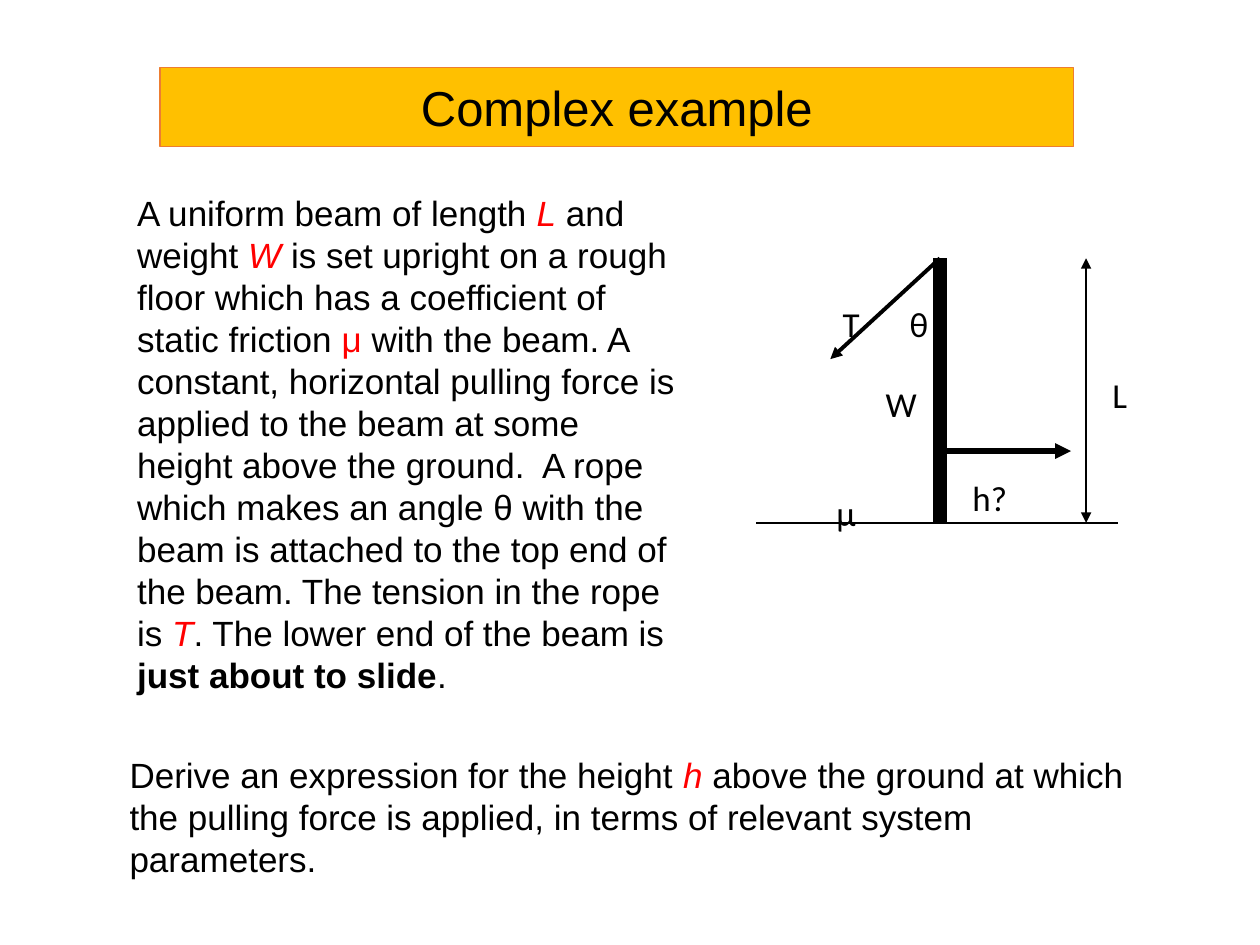
from lxml.etree import SubElement
from pptx import Presentation
from pptx.dml.color import RGBColor
from pptx.enum.shapes import MSO_CONNECTOR as Link, MSO_SHAPE as Shape
from pptx.enum.text import MSO_ANCHOR as Anchor, MSO_AUTO_SIZE as Fit, PP_ALIGN as Align
from pptx.oxml.ns import qn
from pptx.util import Inches, Pt

BLACK = RGBColor(0, 0, 0)
WHITE = RGBColor(255, 255, 255)
RED = RGBColor(255, 0, 0)
GOLD = RGBColor(255, 192, 0)
RUST = RGBColor(237, 125, 49)

deck = Presentation()
deck.slide_width, deck.slide_height = Inches(10), Inches(7.5)
slide = deck.slides.add_slide(deck.slide_layouts[5])

# Grid of 100 columns by 75 rows, in square cells
CELL = deck.slide_width // 100


def grid(*cells):
    return [round(n * CELL) for n in cells]


def set_font(font, name, size):
    font.name, font.size = name, Pt(size)
    font.color.rgb = BLACK


# Title bar
title = slide.shapes.title
title.left, title.top, title.width, title.height = grid(12.7, 5.35, 72.5, 6.3)
title.fill.solid()
title.fill.fore_color.rgb = GOLD
title.line.color.rgb = RUST
title.line.width = Pt(0.75)
frame = title.text_frame
frame.text = "Complex example"
frame.vertical_anchor = Anchor.MIDDLE
head = frame.paragraphs[0]
head.alignment = Align.CENTER
set_font(head.font, "Arial", 28)

# Problem and question: style is "" plain, "r" red, "i" red italic, "b" bold
problem = [
    ("A uniform beam of length ", ""), ("L", "i"), (" and weight ", ""), ("W", "i"),
    (" is set upright on a rough floor which has a coefficient of static friction ", ""),
    ("μ", "r"),
    (" with the beam. A constant, horizontal pulling force is applied to the beam "
     "at some height above the ground.  A rope which makes an angle θ with the beam "
     "is attached to the top end of the beam. The tension in the rope is ", ""),
    ("T", "i"), (". The lower end of the beam is ", ""),
    ("just about to slide", "b"), (".", ""),
]
question = [
    ("Derive an expression for the height ", ""), ("h", "i"),
    (" above the ground at which the pulling force is applied, "
     "in terms of relevant system parameters.", ""),
]
for cells, parts in [((9.9, 14.7, 45.3, 41.4), problem),
                     ((9.3, 59.3, 84.3, 11.1), question)]:
    frame = slide.shapes.add_textbox(*grid(*cells)).text_frame
    frame.word_wrap = True
    frame.auto_size = Fit.SHAPE_TO_FIT_TEXT
    para = frame.paragraphs[0]
    set_font(para.font, "Arial", 20)
    for text, style in parts:
        run = para.add_run()
        run.text = text
        if style in ("r", "i"):
            run.font.color.rgb = RED
        if style == "i":
            run.font.italic = True
        if style == "b":
            run.font.bold = True

# Diagram labels
draw = slide.shapes.add_group_shape().shapes
labels = [
    ("L", 87.3, 28.9, 2.9, 3.8), ("µ", 65.4, 38.3, 3.1, 3.8),
    ("θ", 71.2, 23.3, 3.1, 3.8), ("T", 65.9, 23.3, 3, 3.8),
    ("W", 69.3, 29.6, 3.8, 3.8), ("h?", 76.2, 37.1, 4, 3.5),
]
for text, *cells in labels:
    box = draw.add_shape(Shape.RECTANGLE, *grid(*cells))
    box.shadow.inherit = False
    box.fill.solid()
    box.fill.fore_color.rgb = WHITE
    box.line.fill.background()
    frame = box.text_frame
    frame.text = text
    frame.word_wrap = False
    frame.vertical_anchor = Anchor.TOP
    para = frame.paragraphs[0]
    para.alignment = Align.LEFT
    para.line_spacing = 1.07
    para.space_after = Pt(8)
    set_font(para.font, "Calibri", 20)

# Beam, rope, pull, floor and length mark
TOP, FLOOR, BEAM, MARK = 20.5, 41.5, 74.6, 86.2
lines = [
    (BEAM, TOP, BEAM, FLOOR, 8, []),
    (BEAM, TOP, 65.9, 28.5, 2.25, ["tailEnd"]),
    (75, 35.8, 85, 35.8, 3, ["tailEnd"]),
    (60, FLOOR, 88.7, FLOOR, 1, []),
    (MARK, FLOOR, MARK, TOP, 0.75, ["headEnd", "tailEnd"]),
]
for *ends, width, tips in lines:
    line = draw.add_connector(Link.STRAIGHT, *grid(*ends))
    line.line.color.rgb = BLACK
    line.line.width = Pt(width)
    props = line._element.spPr
    for tip in tips:
        SubElement(props.find(qn("a:ln")), qn("a:" + tip), type="triangle")
    SubElement(props, qn("a:effectLst"))

deck.save("out.pptx")
